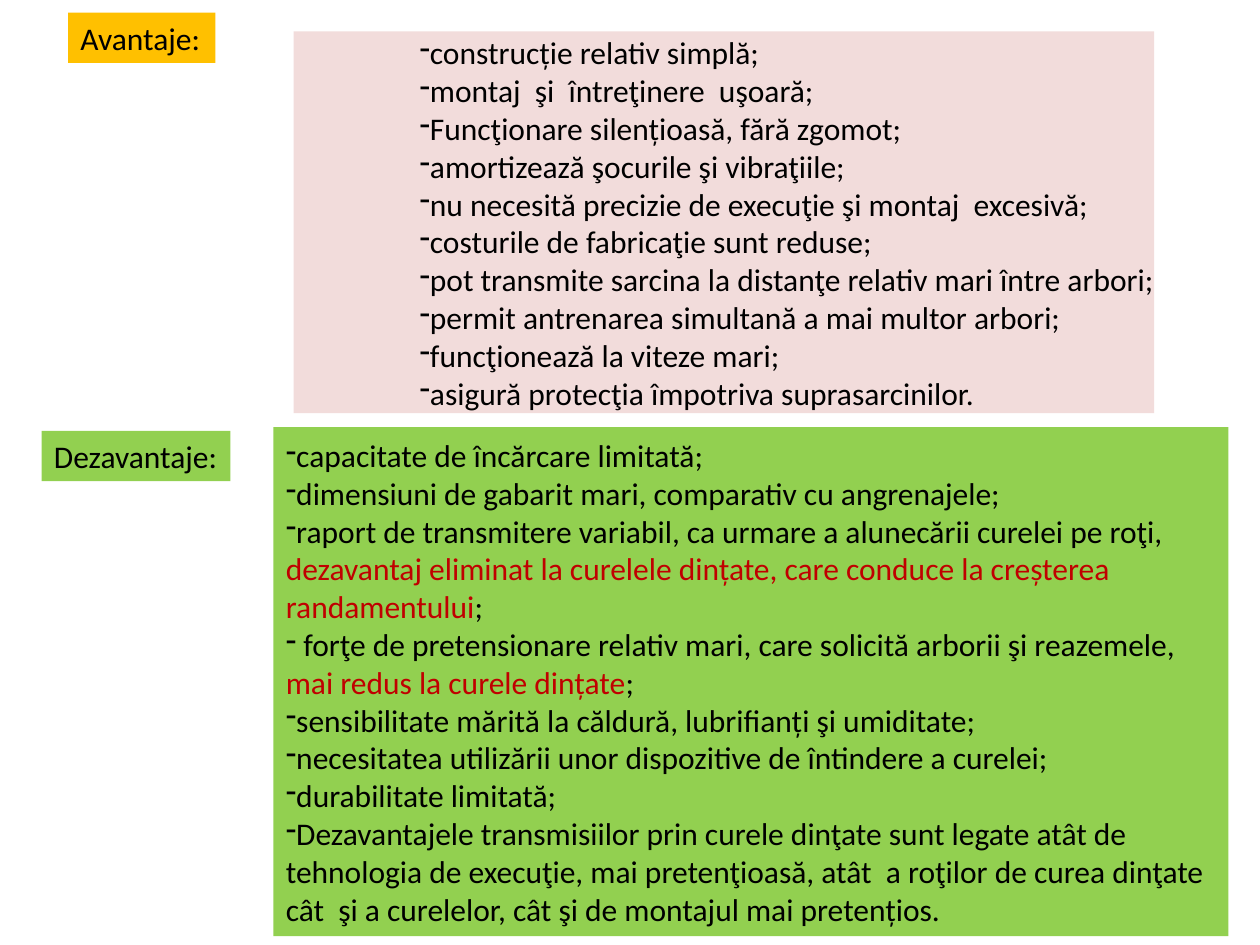
from lxml import etree
from pptx import Presentation
from pptx import util as u
from pptx.dml.color import RGBColor
from pptx.enum import text
from pptx.oxml import ns

BLACK = RGBColor(0x00, 0x00, 0x00)
RED = RGBColor(0xC0, 0x00, 0x00)
AMBER = RGBColor(0xFF, 0xC0, 0x00)
PINK = RGBColor(0xF2, 0xDC, 0xDB)
GREEN = RGBColor(0x92, 0xD0, 0x50)

PROS = [
    "construcție relativ simplă;",
    "montaj  şi  întreţinere  uşoară;",
    "Funcţionare silențioasă, fără zgomot;",
    "amortizează şocurile şi vibraţiile;",
    "nu necesită precizie de execuţie şi montaj  excesivă;",
    "costurile de fabricaţie sunt reduse;",
    "pot transmite sarcina la distanţe relativ mari între arbori;",
    "permit antrenarea simultană a mai multor arbori;",
    "funcţionează la viteze mari;",
    "asigură protecţia împotriva suprasarcinilor.",
]

# In a tuple, every second run is red.
CONS = [
    "capacitate de încărcare limitată;",
    "dimensiuni de gabarit mari, comparativ cu angrenajele;",
    ("raport de transmitere variabil, ca urmare a alunecării curelei pe roţi, ",
     "dezavantaj eliminat la curelele dințate, care conduce la creșterea "
     "randamentului", ";"),
    (" forţe de pretensionare relativ mari, care solicită arborii şi "
     "reazemele, ", "mai redus la curele dințate", ";"),
    "sensibilitate mărită la căldură, lubrifianți şi umiditate;",
    "necesitatea utilizării unor dispozitive de întindere a curelei;",
    "durabilitate limitată;",
    "Dezavantajele transmisiilor prin curele dinţate sunt legate atât de "
    "tehnologia de execuţie, mai pretenţioasă, atât  a roţilor de curea "
    "dinţate cât  şi a curelelor, cât şi de montajul mai pretențios.",
]


class Deck:
    font = "Calibri"
    size = u.Pt(18)

    def __init__(self, slide):
        self.slide = slide

    def box(self, area, fill, wrap):
        """Add a filled text box and return its text frame."""
        box = self.slide.shapes.add_textbox(*map(u.Inches, area))
        box.fill.solid()
        box.fill.fore_color.rgb = fill
        frame = box.text_frame
        frame.word_wrap = wrap
        frame.auto_size = text.MSO_AUTO_SIZE.SHAPE_TO_FIT_TEXT
        return frame

    def add_runs(self, para, runs):
        for i, words in enumerate(runs):
            run = para.add_run()
            run.text = words
            run.font.name = self.font
            run.font.size = self.size
            run.font.color.rgb = RED if i % 2 else BLACK

    def label(self, words, area, fill):
        frame = self.box(area, fill, False)
        self.add_runs(frame.paragraphs[0], [words])

    def dash(self, para, indent):
        """Give the paragraph a dash bullet in the font of its text."""
        props = para._p.get_or_add_pPr()
        props.set("marL", "0")
        props.set("indent", str(u.Inches(indent)))
        etree.SubElement(props, ns.qn("a:buFontTx"))
        etree.SubElement(props, ns.qn("a:buChar")).set("char", "-")

    def list(self, items, area, fill, wrap=True, indent=0):
        frame = self.box(area, fill, wrap)
        frame.vertical_anchor = text.MSO_ANCHOR.MIDDLE
        for i, item in enumerate(items):
            para = frame.add_paragraph() if i else frame.paragraphs[0]
            self.dash(para, indent)
            self.add_runs(para, [item] if isinstance(item, str) else item)
        return frame


def main():
    prs = Presentation()
    prs.slide_width, prs.slide_height = u.Inches(10), u.Inches(7.5)
    deck = Deck(prs.slides.add_slide(prs.slide_layouts[6]))

    deck.label("Avantaje:", (0.54, 0.1, 1.17, 0.4), AMBER)
    pros = deck.list(PROS, (2.33, 0.25, 6.83, 3.03), PINK,
                     wrap=False, indent=0.39)
    pros.margin_left = u.Inches(0.61)
    pros.margin_top = pros.margin_right = pros.margin_bottom = 0

    deck.list(CONS, (2.17, 3.39, 7.58, 4.04), GREEN)
    deck.label("Dezavantaje:", (0.33, 3.42, 1.5, 0.4), GREEN)

    prs.save("out.pptx")


if __name__ == "__main__":
    main()
